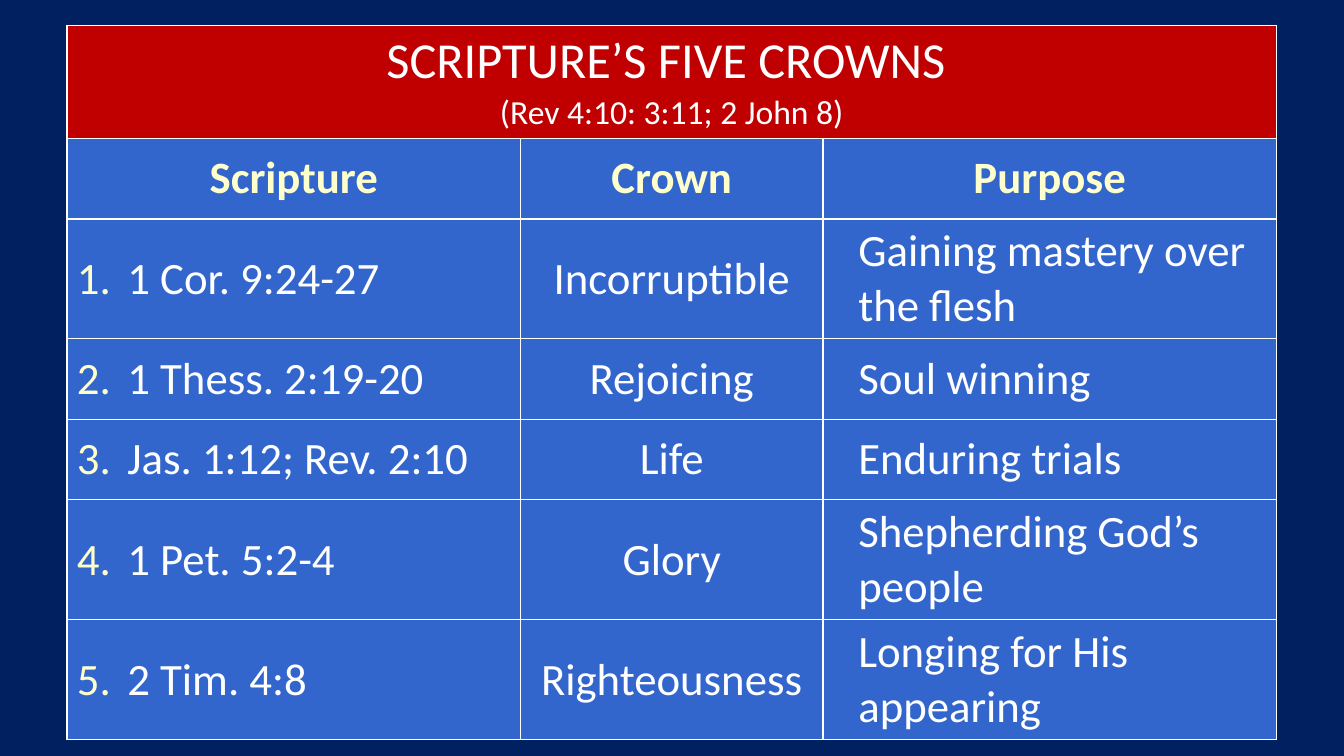
from dataclasses import dataclass

from lxml.etree import SubElement
from pptx import Presentation
from pptx.dml.color import RGBColor as Rgb
from pptx.enum.text import MSO_ANCHOR as Anchor, PP_ALIGN as Align
from pptx.oxml.ns import qn
from pptx.util import Cm, Pt


@dataclass(frozen=True)
class Theme:
    font: str = "Calibri"
    background: str = "002060"
    banner: str = "C00000"
    panel: str = "3366CC"
    white: str = "FFFFFF"
    cream: str = "FFFFCC"
    title_size: int = 36
    subtitle_size: int = 24
    body_size: int = 32


THEME = Theme()
COLUMN_WIDTHS = (11.43, 7.62, 11.43)
TITLE_ROW_HEIGHT = 1.78
ROW_HEIGHT = 2.03
HEADINGS = ("Scripture", "Crown", "Purpose")
CROWNS = (
    ("1 Cor. 9:24-27", "Incorruptible", "Gaining mastery over the flesh"),
    ("1 Thess. 2:19-20", "Rejoicing", "Soul winning"),
    ("Jas. 1:12; Rev. 2:10", "Life", "Enduring trials"),
    ("1 Pet. 5:2-4", "Glory", "Shepherding God’s people"),
    ("2 Tim. 4:8", "Righteousness", "Longing for His appearing"),
)


def add_solid_fill(parent, color):
    fill = SubElement(parent, qn("a:solidFill"))
    SubElement(fill, qn("a:srgbClr"), val=color)


def format_cell(cell, color):
    """Give a cell white borders, a solid fill and middle anchoring."""
    properties = cell._tc.get_or_add_tcPr()
    for side in ("lnL", "lnR", "lnT", "lnB"):
        line = SubElement(properties, qn(f"a:{side}"), w=str(Pt(1)))
        add_solid_fill(line, THEME.white)
    cell.fill.solid()
    cell.fill.fore_color.rgb = Rgb.from_string(color)
    formats = {
        "vertical_anchor": Anchor.MIDDLE,
        "margin_left": Cm(0.25),
        "margin_right": Cm(0.25),
        "margin_top": Cm(0.13),
        "margin_bottom": Cm(0.13),
    }
    for name, value in formats.items():
        setattr(cell, name, value)


def add_text(paragraph, text, size=THEME.body_size, color=THEME.white, bold=False):
    run = paragraph.add_run()
    run.text = text
    formats = {"name": THEME.font, "size": Pt(size), "bold": bold}
    for name, value in formats.items():
        setattr(run.font, name, value)
    run.font.color.rgb = Rgb.from_string(color)


def set_indent(paragraph, left, first_line=0):
    properties = paragraph._p.get_or_add_pPr()
    properties.set("marL", str(Cm(left)))
    properties.set("indent", str(Cm(first_line)))


def add_number(paragraph, number):
    set_indent(paragraph, 1.27, -1.27)
    properties = paragraph._p.get_or_add_pPr()
    color = SubElement(properties, qn("a:buClr"))
    SubElement(color, qn("a:srgbClr"), val=THEME.cream)
    SubElement(properties, qn("a:buFont"), typeface="+mj-lt")
    SubElement(properties, qn("a:buAutoNum"), type="arabicPeriod", startAt=str(number))


def fill_title(table):
    title_cell = table.cell(0, 0)
    title_cell.merge(table.cell(0, len(HEADINGS) - 1))
    paragraph = title_cell.text_frame.paragraphs[0]
    paragraph.alignment = Align.CENTER
    add_text(paragraph, "SCRIPTURE’S FIVE CROWNS ", THEME.title_size)
    paragraph.add_line_break()
    add_text(paragraph, "(Rev 4:10: 3:11; 2 John 8)", THEME.subtitle_size)


def fill_headings(table):
    for column, heading in enumerate(HEADINGS):
        paragraph = table.cell(1, column).text_frame.paragraphs[0]
        paragraph.alignment = Align.CENTER
        add_text(paragraph, heading, color=THEME.cream, bold=True)


def fill_crowns(table):
    for number, texts in enumerate(CROWNS, start=1):
        scripture, crown, purpose = (
            table.cell(number + 1, column).text_frame.paragraphs[0]
            for column in range(len(HEADINGS))
        )
        add_number(scripture, number)
        crown.alignment = Align.CENTER
        set_indent(purpose, 0.64)
        for paragraph, text in zip((scripture, crown, purpose), texts):
            add_text(paragraph, text)


def add_crown_table(slide):
    frame = slide.shapes.add_table(
        len(CROWNS) + 2, len(HEADINGS),
        Cm(1.69), Cm(0.64), Cm(sum(COLUMN_WIDTHS)), Cm(17.78),
    )
    table = frame.table
    table.first_row = False
    table.horz_banding = False
    for column, width in zip(table.columns, COLUMN_WIDTHS):
        column.width = Cm(width)
    for index, row in enumerate(table.rows):
        row.height = Cm(ROW_HEIGHT if index else TITLE_ROW_HEIGHT)
        for cell in row.cells:
            format_cell(cell, THEME.panel if index else THEME.banner)
    frame.height = Cm(17.78)
    return table


def main():
    presentation = Presentation()
    presentation.slide_width = Cm(33.87)
    presentation.slide_height = Cm(19.05)
    slide = presentation.slides.add_slide(presentation.slide_layouts.get_by_name("Blank"))
    slide.background.fill.solid()
    slide.background.fill.fore_color.rgb = Rgb.from_string(THEME.background)
    table = add_crown_table(slide)
    fill_title(table)
    fill_headings(table)
    fill_crowns(table)
    presentation.save("out.pptx")


if __name__ == "__main__":
    main()
